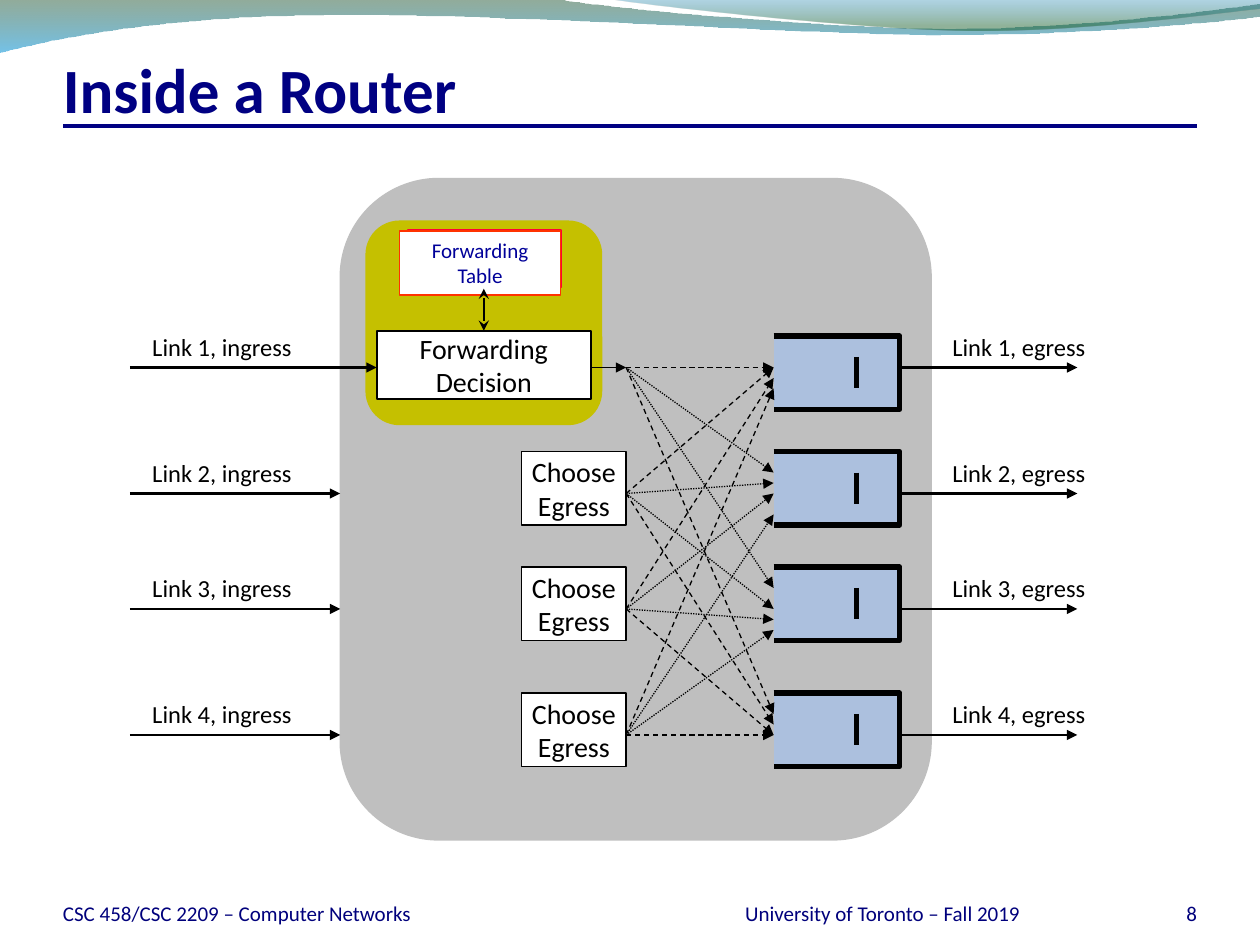
from lxml import etree
from pptx import Presentation
from pptx.dml.color import RGBColor
from pptx.enum.dml import MSO_LINE
from pptx.enum.shapes import MSO_CONNECTOR, MSO_SHAPE
from pptx.enum.text import MSO_ANCHOR, MSO_AUTO_SIZE, PP_ALIGN
from pptx.oxml.ns import qn
from pptx.util import Emu, Inches, Pt

RECT, ROUND = MSO_SHAPE.RECTANGLE, MSO_SHAPE.ROUNDED_RECTANGLE
LEFT, CENTER, RIGHT = PP_ALIGN.LEFT, PP_ALIGN.CENTER, PP_ALIGN.RIGHT
TOP, MIDDLE, BOTTOM = MSO_ANCHOR.TOP, MSO_ANCHOR.MIDDLE, MSO_ANCHOR.BOTTOM
DASH, DOT = MSO_LINE.DASH, MSO_LINE.ROUND_DOT
STRAIGHT = MSO_CONNECTOR.STRAIGHT
FIT = MSO_AUTO_SIZE.SHAPE_TO_FIT_TEXT
FONT = "Calibri"
COLORS = {
    "black": "000000", "white": "FFFFFF", "title": "000082", "footer": "00007C",
    "router": "BFBFBF", "line card": "C5C000", "queue": "ACC0DE",
    "table text": "000099", "table edge": "FF3300", "table back": "FF0033",
    "wave green": "0F461E", "wave sky": "0090D6",
    "wave blue": "0076AF", "wave leaf": "0D5821",
}
RGB = {name: RGBColor.from_string(value) for name, value in COLORS.items()}

prs = Presentation()
prs.slide_width, prs.slide_height = Inches(10), Inches(7.5)
COL, ROW = prs.slide_width / 10, prs.slide_height / 90
slide = prs.slides.add_slide(prs.slide_layouts[6])
shapes = slide.shapes


def add_block(place, text="", kind=None, fill=None, edge=None, edge_width=0.75,
              size=16, color="black", bold=False, align=CENTER, frame=None):
    """Add a preset shape, or a text box when kind is None, placed in columns and rows."""
    box = [Emu(round(n * unit)) for n, unit in zip(place, (COL, ROW, COL, ROW))]
    if kind is None:
        block = shapes.add_textbox(*box)
    else:
        block = shapes.add_shape(kind, *box)
        block.shadow.inherit = False
        if fill:
            block.fill.solid()
            block.fill.fore_color.rgb = RGB[fill]
        else:
            block.fill.background()
        if edge:
            block.line.color.rgb = RGB[edge]
            block.line.width = Pt(edge_width)
        else:
            block.line.fill.background()
    if text:
        for name, value in (frame or {}).items():
            setattr(block.text_frame, name, value)
        block.text_frame.text = text
        for paragraph in block.text_frame.paragraphs:
            paragraph.alignment = align
            font = paragraph.runs[0].font
            font.name, font.size, font.bold = FONT, Pt(size), bold
            font.color.rgb = RGB[color]
    return block


def add_line(x1, y1, x2, y2, width, color="black", dash=None, head=None, tail=None):
    """Add a straight line between two grid points; head and tail are arrowhead types."""
    ends = [Emu(round(n * unit)) for n, unit in zip((x1, y1, x2, y2), (COL, ROW) * 2)]
    link = shapes.add_connector(STRAIGHT, *ends)
    link.line.color.rgb = RGB[color]
    link.line.width = Pt(width)
    if dash:
        link.line.dash_style = dash
    properties = link.line._get_or_add_ln()
    for end, arrow in (("a:headEnd", head), ("a:tailEnd", tail)):
        if arrow:
            etree.SubElement(properties, qn(end), type=arrow)
    etree.SubElement(link._element.spPr, qn("a:effectLst"))
    return link


# Header waves: a start point, then one point per line and three per curve, in columns.
# Gradient stops are (position, colour, opacity in percent).
WAVES = [
    ((0, -0.01),
     [[(4.4, -0.01)],
      [(4.76, 0.06), (6.64, 0.23), (7.58, 0.23)],
      [(8.53, 0.23), (9.58, 0.09), (10, 0.03)],
      [(10.01, 0.13)],
      [(9.83, 0.16), (8.7, 0.28), (7.46, 0.28)],
      [(6.22, 0.27), (3.82, 0.1), (2.57, 0.12)],
      [(1.29, 0.13), (0.46, 0.3), (-0.01, 0.42)]],
     [(0, "wave green", 45), (1, "wave sky", 55)]),
    ((4.79, -0.01),
     [[(5.09, 0.04), (6.82, 0.23), (7.69, 0.24)],
      [(8.56, 0.25), (9.61, 0.11), (10, 0.07)],
      [(10, -0.01)]],
     [(0, "wave blue", 30), (0.8, "wave leaf", 45)]),
]
for start, segments, stops in WAVES:
    points = [(round(x * COL), round(y * COL))
              for x, y in [start, *(point for segment in segments for point in segment)]]
    builder = shapes.build_freeform(*points[0])
    builder.add_line_segments(points[1:], close=True)
    wave = builder.convert_to_shape()
    # Turn each run of three line points into one cubic curve
    steps = iter(list(wave._element.iter(qn("a:lnTo"))))
    for segment in segments:
        first, *others = [next(steps) for _ in segment]
        if others:
            first.tag = qn("a:cubicBezTo")
            for other in others:
                first.append(other[0])
                other.getparent().remove(other)
    wave.shadow.inherit = False
    wave.line.fill.background()
    wave.fill.gradient()
    wave.fill.gradient_angle = 270
    for stop, (position, color, opacity) in zip(wave.fill.gradient_stops, stops):
        stop.position = position
        stop.color.rgb = RGB[color]
        color_element = stop._gs.find(qn("a:srgbClr"))
        etree.SubElement(color_element, qn("a:alpha"), val=str(opacity * 1000))

# Title and footer
FLUSH = {"margin_left": 0, "margin_right": 0, "margin_top": 0, "margin_bottom": 0,
         "vertical_anchor": BOTTOM, "word_wrap": True}
add_line(0.5, 12, 9.5, 12, 2.25, "title")
add_block((0.5, 4, 9, 8), "Inside a Router", size=36, color="title", bold=True,
          align=LEFT, frame=FLUSH)
for left, width, text, align in [
    (0.5, 4.83, "CSC 458/CSC 2209 – Computer Networks", LEFT),
    (8.67, 0.83, "8", RIGHT),
    (5.42, 3.17, "University of Toronto – Fall 2019", CENTER),
]:
    add_block((left, 83.4, width, 4.8), text, size=12, color="footer",
              align=align, frame=FLUSH)

# Router body and the line card of link 1
for place, fill, edge in [((2.7, 17, 4.69, 63), "router", "router"),
                          ((2.9, 21, 1.88, 19.5), "line card", None)]:
    add_block(place, kind=ROUND, fill=fill, edge=edge)

# Links: rows of the lanes, of the queue tops, and of the arrivals from each lane
LANES = [35, 47, 58, 70]
QUEUE_TOPS = [32, 43, 54, 66]
ARRIVALS = [(35, 35, 36, 37), (45, 46, 47, 49), (56, 58, 59, 60), (68, 69, 70, 70)]
INGRESS, ROUTER_EDGE, FABRIC, QUEUE, QUEUE_END = 1.03, 2.7, 4.97, 6.14, 7.14
LABEL = {"word_wrap": False, "auto_size": FIT, "vertical_anchor": TOP}
for number, lane in enumerate(LANES, 1):
    if number > 1:
        add_line(INGRESS, lane, ROUTER_EDGE, lane, 1.5, tail="triangle")
    add_line(6.89, lane, 8.55, lane, 1.5, tail="triangle")
    for left, width, side in [(1.11, 1.31, "ingress"), (7.46, 1.26, "egress")]:
        add_block((left, lane - 4, width, 4), f"Link {number}, {side}", size=14,
                  align=LEFT, frame=LABEL)

# Output queues, open on the left
for top in QUEUE_TOPS:
    corners = [(round(x * COL), round(y * ROW)) for x, y in
               [(QUEUE, top), (QUEUE_END, top), (QUEUE_END, top + 7), (QUEUE, top + 7)]]
    builder = shapes.build_freeform(*corners[0])
    builder.add_line_segments(corners[1:], close=False)
    queue = builder.convert_to_shape()
    queue.shadow.inherit = False
    queue.fill.solid()
    queue.fill.fore_color.rgb = RGB["queue"]
    queue.line.color.rgb = RGB["black"]
    queue.line.width = Pt(3)
    add_line(6.8, top + 2, 6.8, top + 5, 3)

# Switching fabric
for arrivals, dash in zip(ARRIVALS, (DASH, DOT, DOT, DASH)):
    for lane, arrival in zip(LANES, arrivals):
        add_line(FABRIC, lane, QUEUE, arrival, 0.75, dash=dash, tail="triangle")

# Decision boxes
CENTERED = {"word_wrap": False, "vertical_anchor": MIDDLE}
BOX = {"kind": RECT, "fill": "white", "edge": "black", "frame": CENTERED}
for top in QUEUE_TOPS[1:]:
    add_block((4.14, top, 0.83, 7), "Choose\nEgress", **BOX)
decision = add_block((2.99, 31.5, 1.7, 6.5), "Forwarding\nDecision", edge_width=1, **BOX)
add_block((3.24, 21.9, 1.21, 5.5), kind=RECT, edge="table back", edge_width=1)
add_block((3.17, 22, 1.28, 6.1), "Forwarding\nTable", kind=RECT, fill="white",
          edge="table edge", size=12, color="table text",
          frame={"word_wrap": True, "auto_size": FIT, "vertical_anchor": TOP})

lookup = add_line(3.84, 27.5, 3.84, 31.5, 1, head="stealth", tail="stealth")
lookup.end_connect(decision, 0)
add_line(INGRESS, 35, 2.99, 35, 1.5, tail="triangle")
add_line(4.69, 35, FABRIC, 35, 0.75, tail="triangle")

prs.save("out.pptx")
